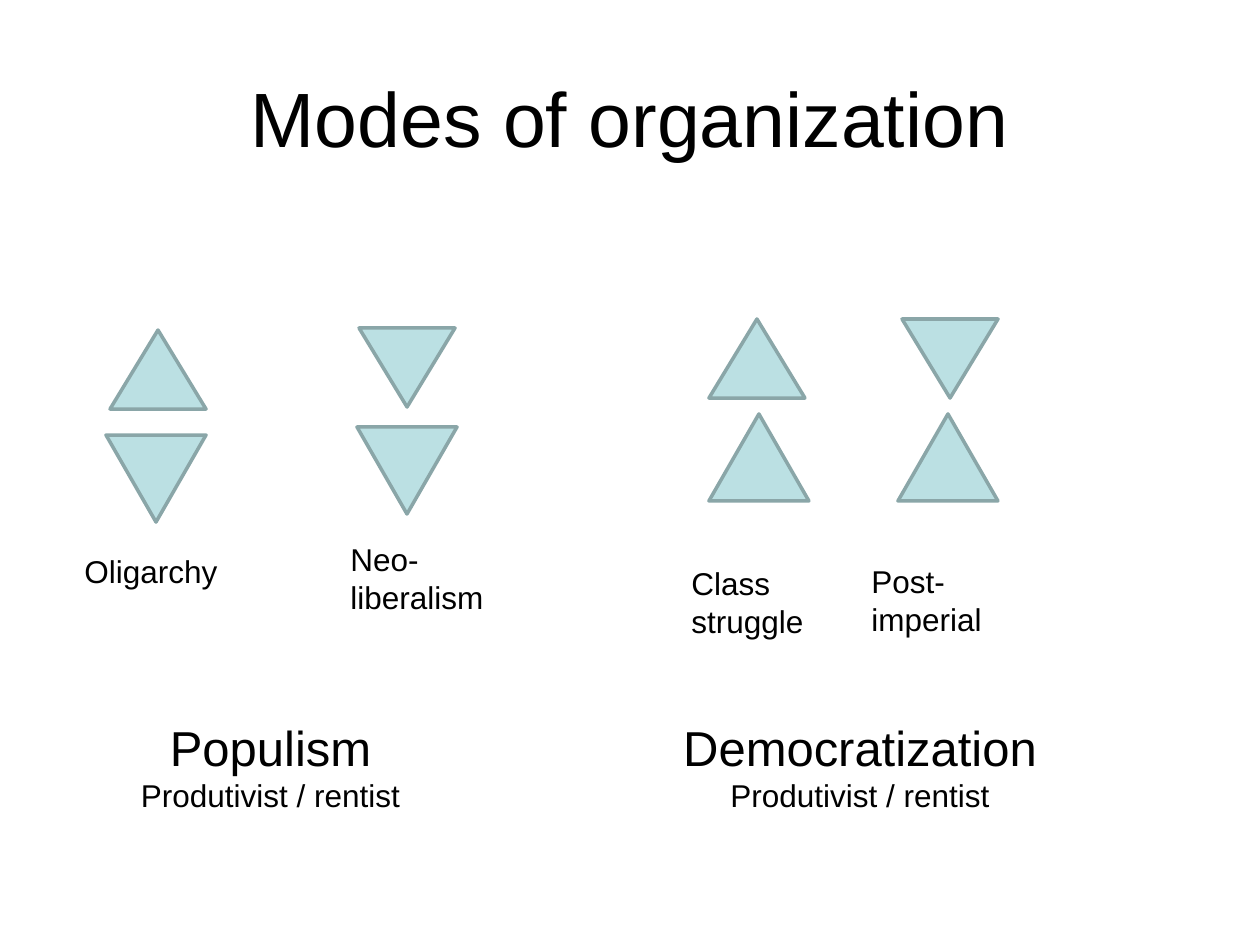
from pptx import Presentation
from pptx.dml.color import RGBColor
from pptx.enum.shapes import MSO_SHAPE as Shape
from pptx.enum.text import MSO_ANCHOR as Anchor, MSO_AUTO_SIZE as AutoSize, PP_ALIGN as Align
from pptx.util import Pt

PX = 7257.6  # EMU per px, 126 px to the inch
COLORS = {"text": "000000", "fill": "BBE0E3", "line": "8AA6A8"}
UP, DOWN = 0, 180
UPPER_SIZE, LOWER_SIZE = (96, 79), (100, 87)

# Content: each mode has an upper triangle, a lower triangle and a label
TITLE = "Modes of organization"
MODES = [
    {"label": "Oligarchy", "box": (72, 546, 186, 50),
     "upper": (110, 330, UP), "lower": (106, 435, DOWN)},
    {"label": "Neo-liberalism", "box": (338, 534, 183, 89),
     "upper": (359, 328, DOWN), "lower": (357, 427, DOWN)},
    {"label": "Class struggle", "box": (679, 558, 159, 89),
     "upper": (709, 319, UP), "lower": (709, 414, UP)},
    {"label": "Post-imperial", "box": (859, 556, 163, 89),
     "upper": (902, 319, DOWN), "lower": (898, 414, UP)},
]
SYSTEMS = [
    ("Populism", (127, 711, 287, 111)),
    ("Democratization", (668, 711, 384, 111)),
]
SUBTITLE = "Produtivist / rentist"


def emu(*lengths):
    return [round(length * PX) for length in lengths]


def color(name):
    return RGBColor.from_string(COLORS[name])


def write(frame, lines, align, **formats):
    """Fill a text frame with (text, size) lines."""
    for name, value in formats.items():
        setattr(frame, name, value)
    for index, (text, size) in enumerate(lines):
        para = frame.paragraphs[0] if index == 0 else frame.add_paragraph()
        para.alignment = align
        span = para.add_run()
        span.text = text
        for name, value in {"name": "Arial", "size": Pt(size)}.items():
            setattr(span.font, name, value)
        span.font.color.rgb = color("text")


def add_text(page, place, lines, align, wrap):
    box = page.shapes.add_textbox(*emu(*place))
    write(box.text_frame, lines, align, word_wrap=wrap,
          auto_size=AutoSize.SHAPE_TO_FIT_TEXT)


def add_triangle(page, left, top, rotation, size):
    triangle = page.shapes.add_shape(Shape.ISOSCELES_TRIANGLE, *emu(left, top, *size))
    triangle.rotation = rotation
    triangle.shadow.inherit = False
    triangle.fill.solid()
    triangle.fill.fore_color.rgb = color("fill")
    triangle.line.color.rgb = color("line")
    triangle.line.width = Pt(2)


def main():
    deck = Presentation()
    deck.slide_width, deck.slide_height = emu(1260, 945)
    page = deck.slides.add_slide(deck.slide_layouts[5])

    # Title
    title = page.shapes.title
    title.left, title.top, title.width, title.height = emu(63, 38, 1134, 157)
    write(title.text_frame, [(TITLE, 44)], Align.CENTER,
          word_wrap=True, vertical_anchor=Anchor.MIDDLE)

    # Triangle pairs with their labels
    for mode in MODES:
        add_triangle(page, *mode["upper"], UPPER_SIZE)
        add_triangle(page, *mode["lower"], LOWER_SIZE)
        add_text(page, mode["box"], [(mode["label"], 18)], Align.LEFT, True)

    # Captions below
    for name, place in SYSTEMS:
        add_text(page, place, [(name, 28), (SUBTITLE, 18)], Align.CENTER, False)

    deck.save("out.pptx")


if __name__ == "__main__":
    main()
